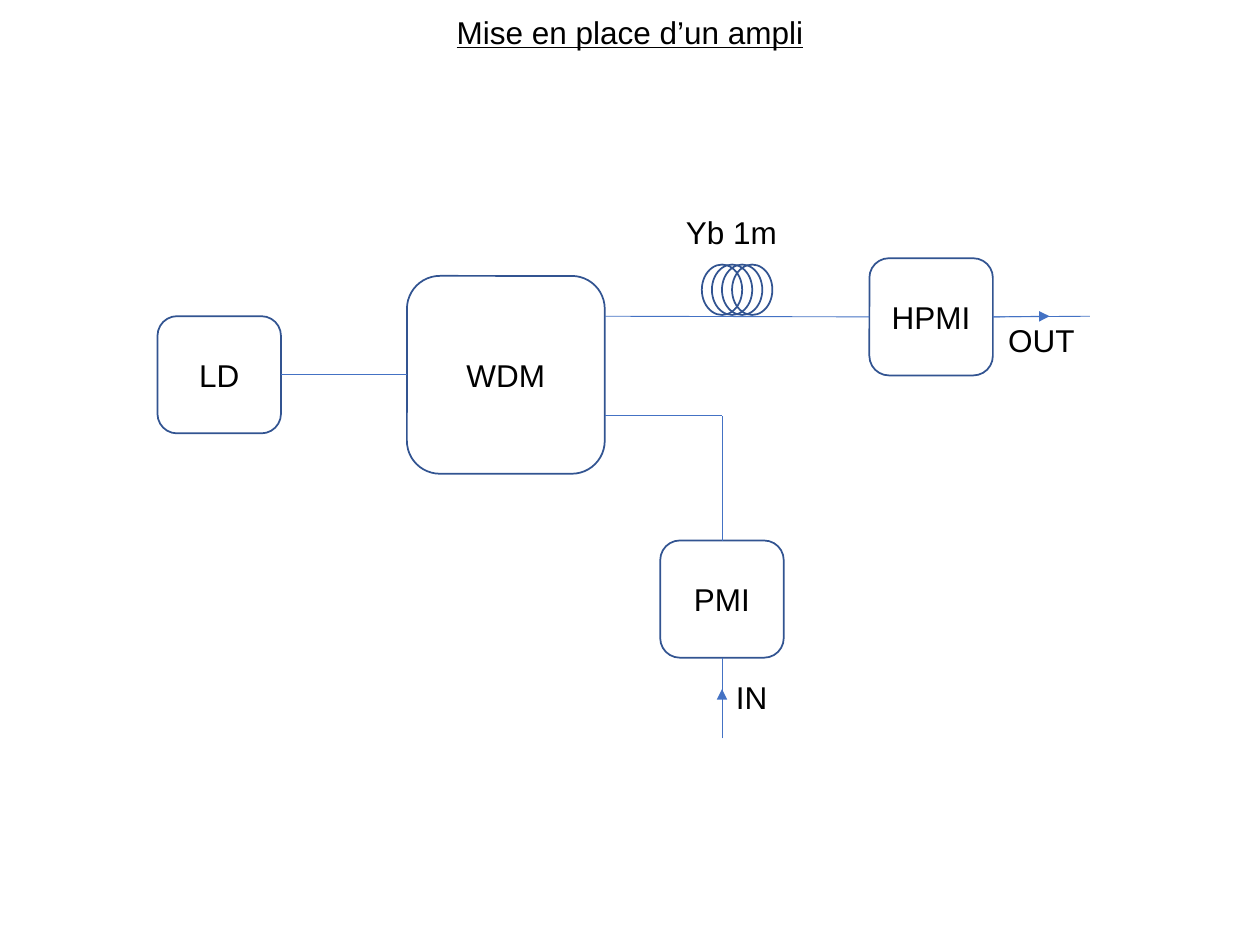
"""Build the slide showing the layout of a fibre amplifier."""
import pptx
import pptx.dml.color
import pptx.enum.shapes
import pptx.enum.text
import pptx.oxml
import pptx.oxml.ns
import pptx.util
from pptx.util import Inches

THEME = {
    "font": "Arial",
    "size": 18,
    "text": "000000",
    "outline": "325491",
    "outline_width": 1,
    "fibre": "4472C4",
    "fibre_width": 0.5,
}
TITLE = ("Mise en place d’un ampli", (1.38, 0.05, 7.24, 0.4))
BLOCKS = {
    "LD": (1.25, 2.51, 0.98, 0.93),
    "WDM": (3.23, 2.19, 1.57, 1.57),
    "HPMI": (6.9, 2.05, 0.98, 0.93),
    "PMI": (5.24, 4.29, 0.98, 0.93),
}
LABELS = [
    ("Yb 1m", 5.14, 1.64),
    ("IN", 5.3, 5.33),
    ("OUT", 7.6, 2.5),
]
LABEL_SIZE = (1.33, 0.4)
COIL = {"left": 5.57, "top": 2.1, "width": 0.32, "height": 0.4, "step": 0.08, "turns": 4}
TOP, LEFT, BOTTOM, RIGHT = range(4)
FIBRES = [
    {"from": (2.23, 2.97), "to": (3.23, 2.97), "begin": ("LD", RIGHT), "end": ("WDM", LEFT)},
    {"from": (6.9, 2.51), "to": (4.8, 2.51), "begin": ("HPMI", LEFT)},
    {"from": (5.73, 4.29), "to": (5.73, 3.3), "begin": ("PMI", TOP)},
    {"from": (5.73, 3.3), "to": (4.8, 3.3)},
    {"from": (5.73, 5.22), "to": (5.73, 5.86), "begin": ("PMI", BOTTOM)},
    {"from": (7.88, 2.51), "to": (8.65, 2.51), "begin": ("HPMI", RIGHT)},
    {"from": (5.73, 5.86), "to": (5.73, 5.47), "arrow": True},
    {"from": (7.88, 2.51), "to": (8.33, 2.51), "begin": ("HPMI", RIGHT), "arrow": True},
]


def colour(name):
    return pptx.dml.color.RGBColor.from_string(THEME[name])


def write(shape, text, underline=None):
    frame = shape.text_frame
    frame.word_wrap = True
    frame.auto_size = pptx.enum.text.MSO_AUTO_SIZE.NONE
    frame.vertical_anchor = pptx.enum.text.MSO_ANCHOR.MIDDLE
    paragraph = frame.paragraphs[0]
    paragraph.alignment = pptx.enum.text.PP_ALIGN.CENTER
    run = paragraph.add_run()
    run.text = text
    run.font.name = THEME["font"]
    run.font.size = pptx.util.Pt(THEME["size"])
    run.font.color.rgb = colour("text")
    run.font.underline = underline


def add_title(slide):
    text, box = TITLE
    title = slide.shapes.title
    title.left, title.top, title.width, title.height = map(Inches, box)
    write(title, text, underline=True)


def add_outline(slide, kind, box):
    shape = slide.shapes.add_shape(kind, *map(Inches, box))
    shape.shadow.inherit = False
    shape.fill.background()
    shape.line.color.rgb = colour("outline")
    shape.line.width = pptx.util.Pt(THEME["outline_width"])
    return shape


def add_block(slide, name, box):
    block = add_outline(slide, pptx.enum.shapes.MSO_SHAPE.ROUNDED_RECTANGLE, box)
    block.text_frame.margin_left = block.text_frame.margin_right = 0
    write(block, name)
    return block


def add_coil(slide):
    for turn in range(COIL["turns"]):
        left = COIL["left"] + turn * COIL["step"]
        box = (left, COIL["top"], COIL["width"], COIL["height"])
        add_outline(slide, pptx.enum.shapes.MSO_SHAPE.OVAL, box)


def add_fibre(slide, blocks, fibre):
    connector = slide.shapes.add_connector(
        pptx.enum.shapes.MSO_CONNECTOR.STRAIGHT,
        *map(Inches, fibre["from"] + fibre["to"]),
    )
    if "begin" in fibre:
        name, side = fibre["begin"]
        connector.begin_connect(blocks[name], side)
    if "end" in fibre:
        name, side = fibre["end"]
        connector.end_connect(blocks[name], side)
    connector.line.color.rgb = colour("fibre")
    connector.line.width = pptx.util.Pt(THEME["fibre_width"])
    properties = connector._element.spPr
    if fibre.get("arrow"):
        line = properties.find(pptx.oxml.ns.qn("a:ln"))
        line.append(pptx.oxml.parse_xml(
            f'<a:tailEnd {pptx.oxml.ns.nsdecls("a")} type="triangle"/>'))
    properties.append(pptx.oxml.parse_xml(
        f'<a:effectLst {pptx.oxml.ns.nsdecls("a")}/>'))


def main():
    presentation = pptx.Presentation()
    presentation.slide_width = Inches(10)
    presentation.slide_height = Inches(7.5)
    slide = presentation.slides.add_slide(presentation.slide_layouts[5])
    add_title(slide)
    blocks = {name: add_block(slide, name, box) for name, box in BLOCKS.items()}
    for fibre in FIBRES:
        add_fibre(slide, blocks, fibre)
    add_coil(slide)
    for text, left, top in LABELS:
        label = slide.shapes.add_textbox(*map(Inches, (left, top) + LABEL_SIZE))
        write(label, text)
    presentation.save("out.pptx")


if __name__ == "__main__":
    main()
